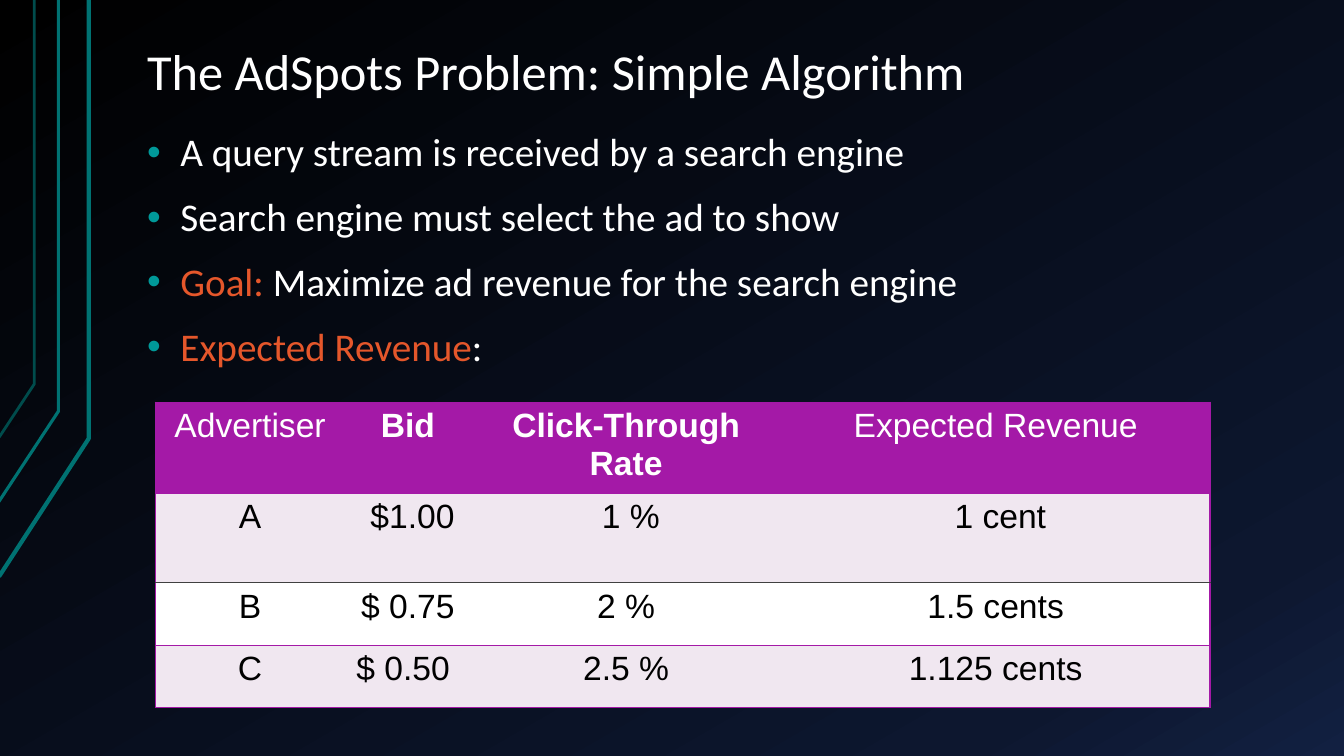
from copy import deepcopy

from lxml import etree
from pptx import Presentation
from pptx.dml.color import RGBColor
from pptx.enum.text import MSO_ANCHOR as Anchor, PP_ALIGN as Align
from pptx.oxml.ns import qn
from pptx.util import Inches, Pt

WHITE, BLACK, TEAL, ORANGE = "FFFFFF", "000000", "009999", "E5572B"
PURPLE, PALE, GREY = "A419A7", "F0E7F0", "404040"

BACKGROUND_STOPS = [(0, "000000"), (0.85, "0D172F"), (1, "122041")]
# Points, colour, line width
CORNER_LINES = [
    ([(-0.01, 5.72), (0.88, 4.35), (0.88, 0)], "007272", 3),
    ([(-0.02, 4.99), (0.58, 4.08), (0.58, 0)], "007272", 2.25),
    ([(-0.01, 4.34), (0.34, 3.81), (0.34, 0)], "004C4C", 2),
]
TITLE = "The AdSpots Problem: Simple Algorithm"
BULLETS = [
    [("A query stream is received by a search engine", WHITE)],
    [("Search engine must select the ad to show", WHITE)],
    [("Goal: ", ORANGE), ("Maximize ad revenue for the search engine", WHITE)],
    [("Expected Revenue", ORANGE), (":", WHITE)],
]
TABLE_ROWS = [
    ("Advertiser", "Bid", "Click-Through Rate", "Expected Revenue"),
    ("A", " $1.00", " 1 %", " 1 cent"),
    ("B", "$ 0.75", "2 %", "1.5 cents"),
    ("C", "$ 0.50 ", "2.5 %", "1.125 cents"),
]
BOLD_HEADERS = {"Bid", "Click-Through Rate"}
COLUMN_WIDTHS = [1.88, 1.25, 3.08, 4.25]
ROW_HEIGHTS = [0.85, 0.89, 0.62, 0.62]
ROW_FILLS = [PURPLE, PALE, WHITE, PALE]
RULES = [PURPLE, PURPLE, GREY, PURPLE, PURPLE]  # above, between and below rows


def color(hex_value):
    return RGBColor.from_string(hex_value)


def set_font(font, name, size, hex_value, bold=False):
    font.name, font.size, font.bold = name, Pt(size), bold
    font.color.rgb = color(hex_value)


def paint_background(slide):
    fill = slide.background.fill
    fill.gradient()
    fill.gradient_angle = 300
    first = slide.background._cSld.find(".//" + qn("a:gs"))
    first.addnext(deepcopy(first))
    for stop, (position, hex_value) in zip(fill.gradient_stops, BACKGROUND_STOPS):
        stop.position = position
        stop.color.rgb = color(hex_value)


def add_corner_line(slide, points, hex_value, width):
    start, *rest = [(Inches(x), Inches(y)) for x, y in points]
    builder = slide.shapes.build_freeform(*start)
    builder.add_line_segments(rest, close=False)
    shape = builder.convert_to_shape()
    shape.shadow.inherit = False
    shape.fill.background()
    shape.line.color.rgb = color(hex_value)
    shape.line.width = Pt(width)


def add_text_frame(slide, top, height, anchor):
    box = slide.shapes.add_textbox(Inches(1.33), Inches(top), Inches(11.33), Inches(height))
    frame = box.text_frame
    frame.word_wrap = True
    frame.vertical_anchor = anchor
    frame.margin_left = frame.margin_right = Inches(0.13)
    frame.margin_top = frame.margin_bottom = Inches(0.07)
    return frame


def add_bullet(paragraph):
    properties = paragraph._p.get_or_add_pPr()
    properties.set("marL", str(Inches(0.33)))
    properties.set("indent", str(-Inches(0.33)))
    bullet_color = etree.SubElement(properties, qn("a:buClr"))
    etree.SubElement(bullet_color, qn("a:srgbClr"), val=TEAL)
    etree.SubElement(properties, qn("a:buFont"), typeface="Arial")
    etree.SubElement(properties, qn("a:buChar"), char="•")


def set_borders(cell, borders):
    """Give the cell its left, right, top and bottom lines; None means no line."""
    properties = cell._tc.get_or_add_tcPr()
    for index, (side, hex_value) in enumerate(zip("LRTB", borders)):
        line = etree.Element(qn("a:ln" + side), w=str(Pt(1)))
        if hex_value:
            solid = etree.SubElement(line, qn("a:solidFill"))
            etree.SubElement(solid, qn("a:srgbClr"), val=hex_value)
        else:
            etree.SubElement(line, qn("a:noFill"))
        properties.insert(index, line)


def add_revenue_table(slide):
    table = slide.shapes.add_table(
        len(TABLE_ROWS), len(COLUMN_WIDTHS), Inches(1.54), Inches(3.99),
        Inches(sum(COLUMN_WIDTHS)), Inches(sum(ROW_HEIGHTS))).table
    for column, width in zip(table.columns, COLUMN_WIDTHS):
        column.width = Inches(width)
    last = len(COLUMN_WIDTHS) - 1
    for r, texts in enumerate(TABLE_ROWS):
        table.rows[r].height = Inches(ROW_HEIGHTS[r])
        for c, text in enumerate(texts):
            cell = table.cell(r, c)
            cell.fill.solid()
            cell.fill.fore_color.rgb = color(ROW_FILLS[r])
            set_borders(cell, (PURPLE if c == 0 else None, PURPLE if c == last else None,
                               RULES[r], RULES[r + 1]))
            paragraph = cell.text_frame.paragraphs[0]
            paragraph.text = text
            paragraph.alignment = Align.CENTER
            set_font(paragraph.font, "Arial", 24, BLACK if r else WHITE, text in BOLD_HEADERS)


def main():
    presentation = Presentation()
    presentation.slide_width, presentation.slide_height = Inches(13.33), Inches(7.5)
    slide = presentation.slides.add_slide(presentation.slide_layouts[6])
    paint_background(slide)
    for points, hex_value, width in CORNER_LINES:
        add_corner_line(slide, points, hex_value, width)

    title = add_text_frame(slide, 0.3, 0.78, Anchor.BOTTOM).paragraphs[0]
    title.text = TITLE
    title.line_spacing = 0.9
    set_font(title.font, "Calibri", 36, WHITE)

    body = add_text_frame(slide, 1.25, 2.65, Anchor.TOP)
    for index, runs in enumerate(BULLETS):
        paragraph = body.add_paragraph() if index else body.paragraphs[0]
        paragraph.line_spacing = 0.9
        paragraph.space_before = Pt(16 if index else 0)
        add_bullet(paragraph)
        for text, hex_value in runs:
            run = paragraph.add_run()
            run.text = text
            set_font(run.font, "Calibri", 28, hex_value)

    add_revenue_table(slide)
    presentation.save("out.pptx")


if __name__ == "__main__":
    main()
